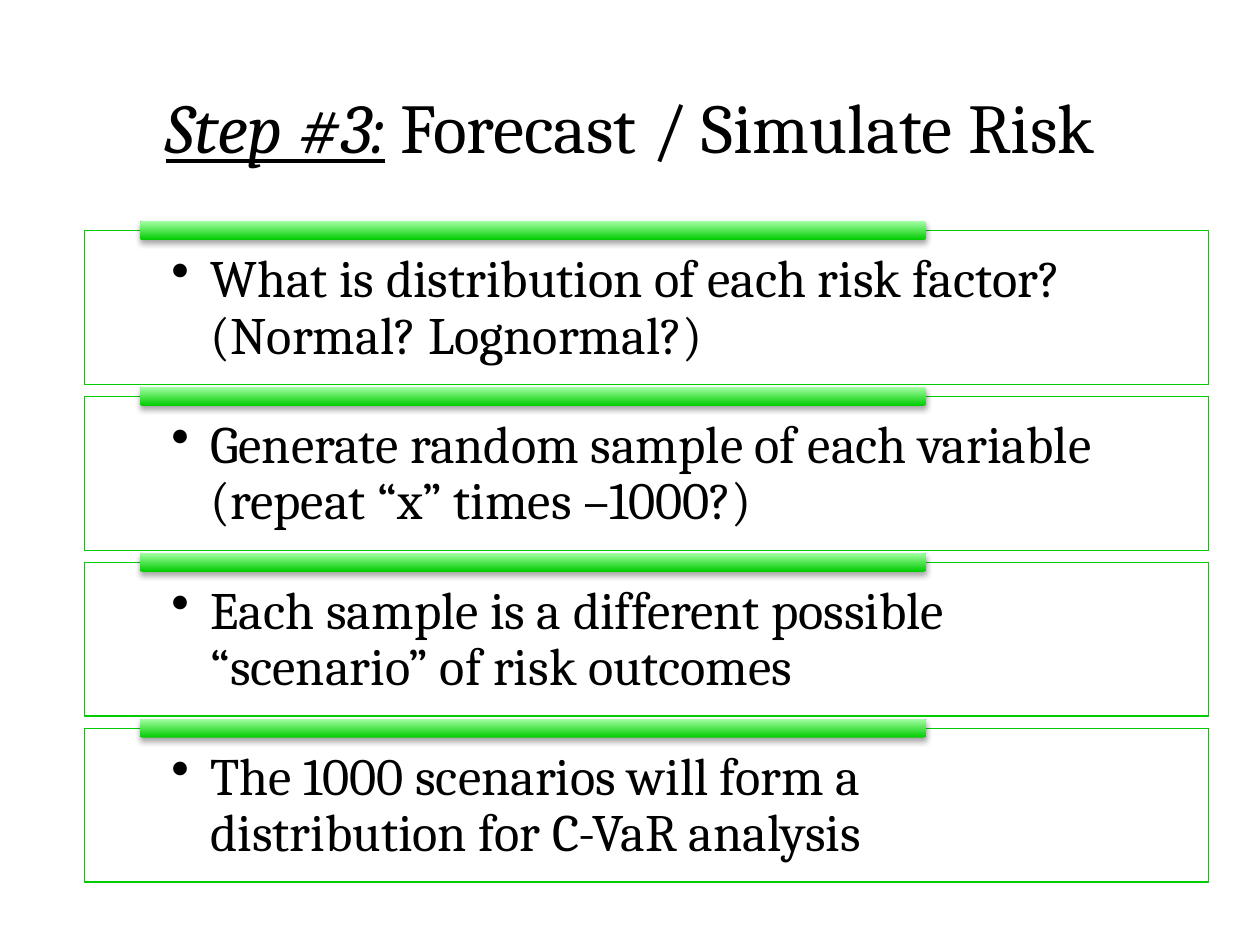
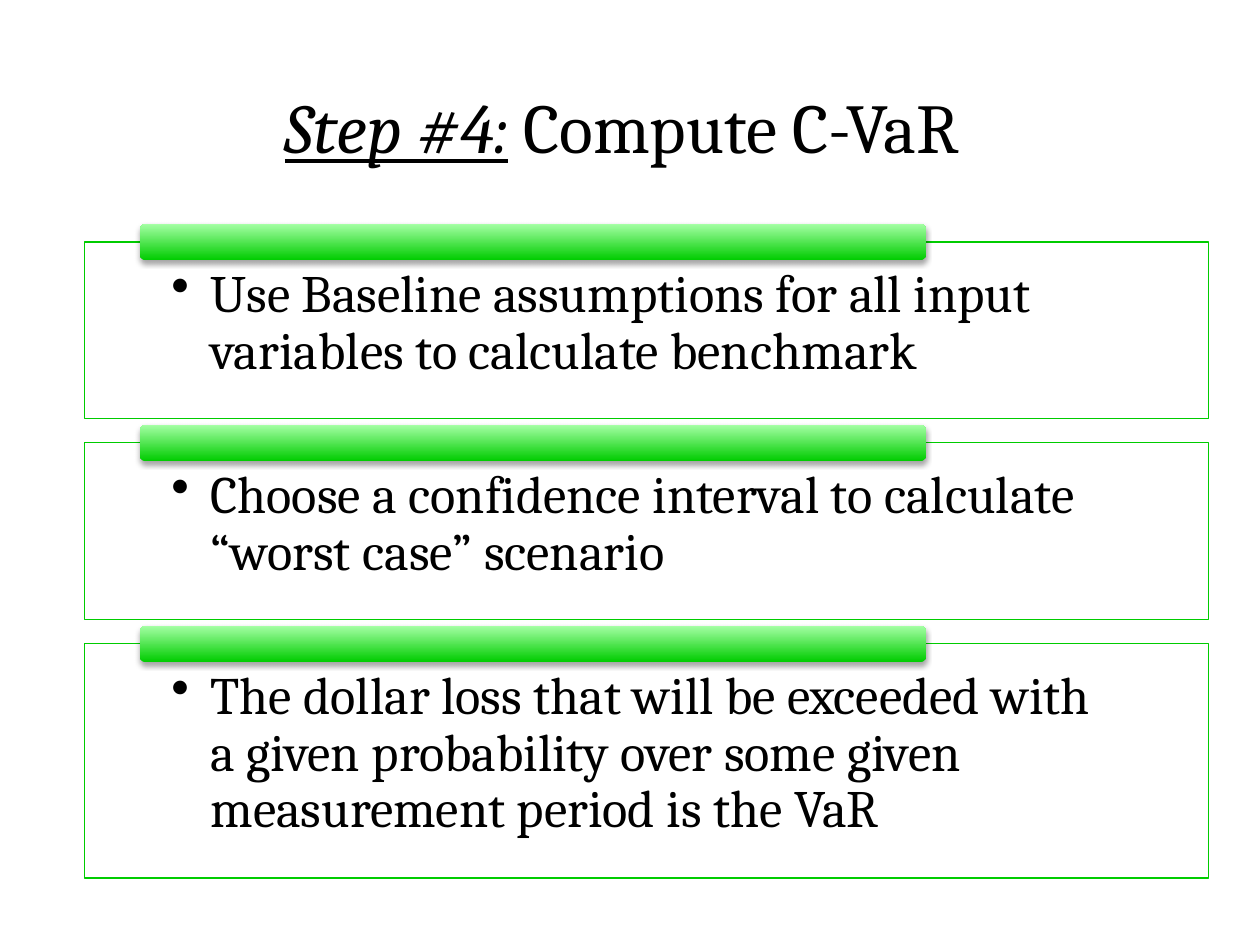
from lxml.etree import SubElement as Sub
from pptx import Presentation
from pptx.dml.color import RGBColor as Rgb
from pptx.enum.shapes import MSO_SHAPE as Kind
from pptx.enum.text import MSO_ANCHOR as Anchor, PP_ALIGN as Align
from pptx.oxml.ns import qn
from pptx.util import Inches, Pt

COLORS = {"text": "000000", "panel": "FFFFFF", "green": "00CC00", "light": "A5FFA5"}
FONT = "Cambria"
LEFT, WIDTH = 0.67, 8.92

STEPS = [
    {
        "title": ("Step #3:", " Forecast / Simulate Risk"),
        "top": 1.83, "base": 7.0, "bar": 0.15, "inset": 0.17,
        "items": [
            (1.22, "What is distribution of each risk factor? (Normal? Lognormal?)"),
            (1.22, "Generate random sample of each variable (repeat “x” times –1000?)"),
            (1.22, "Each sample is a different possible “scenario” of risk outcomes"),
            (1.22, "The 1000 scenarios will form a distribution for C-VaR analysis"),
        ],
    },
    {
        "title": ("Step #4:", " Compute C-VaR "),
        "top": 1.92, "base": 6.97, "bar": 0.29, "inset": 0.2,
        "items": [
            (1.4, "Use Baseline assumptions for all input variables to calculate benchmark"),
            (1.4, "Choose a confidence interval to calculate “worst case” scenario"),
            (1.86, "The dollar loss that will be exceeded with a given probability "
                   "over some given measurement period is the VaR"),
        ],
    },
]


def color(name):
    return Rgb.from_string(COLORS[name])


def box(*sizes):
    return [Inches(size) for size in sizes]


def write(para, text, size=30, italic=False, under=False):
    run = para.add_run()
    run.text = text
    font = run.font
    font.name, font.size = FONT, Pt(size)
    font.italic, font.underline = italic, under
    font.color.rgb = color("text")


def add_title(slide, step, topic):
    frame = slide.shapes.add_textbox(*box(0.75, 0.5, 8.5, 1)).text_frame
    frame.word_wrap = True
    frame.vertical_anchor = Anchor.MIDDLE
    para = frame.paragraphs[0]
    para.alignment = Align.CENTER
    write(para, step, size=40, italic=True, under=True)
    write(para, topic, size=40)


def set_bullet(para):
    props = para._p.get_or_add_pPr()
    props.set("marL", str(Inches(0.31)))
    props.set("indent", str(Inches(-0.31)))
    Sub(props, qn("a:buChar"), char="•")


def add_panel(slide, top, height, text, inset):
    panel = slide.shapes.add_shape(Kind.RECTANGLE, *box(LEFT, top, WIDTH, height))
    panel.shadow.inherit = False
    panel.fill.solid()
    panel.fill.fore_color.rgb = color("panel")
    tint = panel._element.spPr.find(qn("a:solidFill"))[0]
    Sub(tint, qn("a:alpha"), val="90000")
    panel.line.color.rgb = color("green")
    panel.line.width = Pt(0.75)
    frame = panel.text_frame
    frame.word_wrap = True
    frame.vertical_anchor = Anchor.TOP
    frame.margin_left = frame.margin_right = Inches(0.69)
    frame.margin_top, frame.margin_bottom = box(inset, 0.23)
    para = frame.paragraphs[0]
    para.alignment = Align.LEFT
    para.line_spacing = 0.9
    set_bullet(para)
    write(para, text)


def add_bar(slide, mid, height):
    bar = slide.shapes.add_shape(
        Kind.ROUNDED_RECTANGLE, *box(1.11, mid - height / 2, 6.24, height))
    bar.fill.gradient()
    bar.fill.gradient_angle = 90
    for stop, name in zip(bar.fill.gradient_stops, ("green", "light")):
        stop.color.rgb = color(name)
    bar.line.fill.background()
    add_shadow(bar)


def add_shadow(shape):
    shape.shadow.inherit = False
    effects = shape._element.spPr.find(qn("a:effectLst"))
    shade = Sub(effects, qn("a:outerShdw"), blurRad=str(Pt(3.1)),
                dist=str(Pt(1.8)), dir="5400000", rotWithShape="0")
    tint = Sub(shade, qn("a:srgbClr"), val=COLORS["text"])
    Sub(tint, qn("a:alpha"), val="35000")


def add_step(deck, step):
    slide = deck.slides.add_slide(deck.slide_layouts[6])
    add_title(slide, *step["title"])
    items, top = step["items"], step["top"]
    used = sum(height for height, text in items)
    gap = (step["base"] - top - used) / (len(items) - 1)
    for height, text in items:
        add_panel(slide, top, height, text, step["inset"])
        add_bar(slide, top, step["bar"])
        top += height + gap


def main():
    deck = Presentation()
    deck.slide_width, deck.slide_height = box(10, 7.5)
    for step in STEPS:
        add_step(deck, step)
    deck.save("out.pptx")


if __name__ == "__main__":
    main()
